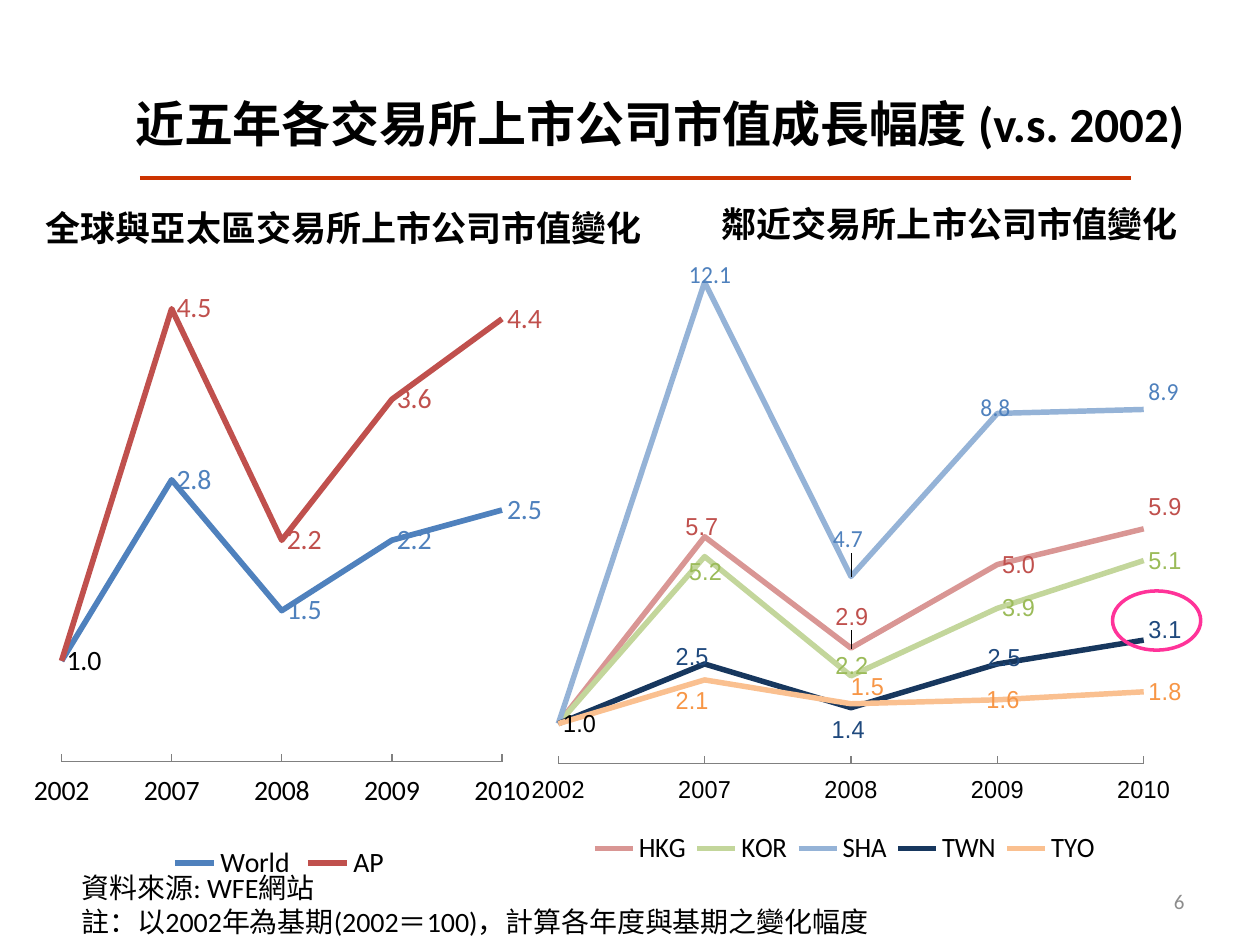
import dataclasses

import lxml.etree
import pptx
import pptx.chart.data
import pptx.dml.color
import pptx.enum.chart
import pptx.enum.shapes
import pptx.enum.text
import pptx.oxml
import pptx.oxml.ns
import pptx.util

Inches = pptx.util.Inches
Pt = pptx.util.Pt
qn = pptx.oxml.ns.qn
rgb = pptx.dml.color.RGBColor.from_string
ALIGN = pptx.enum.text.PP_ALIGN


@dataclasses.dataclass(frozen=True)
class Theme:
    font: str = "Calibri"
    plain_font: str = "Arial"
    text: str = "000000"
    muted: str = "8C8C8C"
    axis: str = "808080"
    rule: str = "CC3300"
    highlight: str = "FF3399"
    blue: str = "4F81BD"
    red: str = "C0504D"
    green: str = "9BBB59"
    navy: str = "1F497D"
    orange: str = "F79646"
    title_size: int = 28
    heading_size: int = 20
    body_size: int = 16
    label_size: int = 14
    number_size: int = 12
    series_width: float = 3.25


theme = Theme()


def write(shape, lines, size, align=ALIGN.LEFT, bold=False, color=theme.text):
    frame = shape.text_frame
    frame.word_wrap = True
    frame.text = "\n".join(lines)
    for paragraph in frame.paragraphs:
        paragraph.alignment = align
        formats = {"name": theme.font, "size": Pt(size), "bold": bold}
        for run in paragraph.runs:
            for name, value in formats.items():
                setattr(run.font, name, value)
            run.font.color.rgb = rgb(color)


def place(parent, index, **values):
    """Give a chart part a manual layout, in fractions of the chart."""
    for old in parent.findall(qn("c:layout")):
        parent.remove(old)
    layout = lxml.etree.Element(qn("c:layout"))
    manual = lxml.etree.SubElement(layout, qn("c:manualLayout"))
    for name, value in values.items():
        lxml.etree.SubElement(manual, qn("c:" + name)).set("val", str(value))
    parent.insert(index, layout)


presentation = pptx.Presentation()
presentation.slide_width, presentation.slide_height = Inches(10), Inches(7.5)
slide = presentation.slides.add_slide(presentation.slide_layouts[5])
shapes = slide.shapes

# Title and rule
title = shapes.title
box = {"left": 0.47, "top": 0.31, "width": 9.53, "height": 1.33}
for name, value in box.items():
    setattr(title, name, Inches(value))
title.text_frame.vertical_anchor = pptx.enum.text.MSO_ANCHOR.MIDDLE
write(title, ["近五年各交易所上市公司市值成長幅度 (v.s. 2002)"],
      theme.title_size, ALIGN.CENTER, True)

rule = shapes.add_connector(pptx.enum.shapes.MSO_CONNECTOR.STRAIGHT,
                            Inches(1.11), Inches(1.41), Inches(8.98), Inches(1.41))
rule.line.color.rgb = rgb(theme.rule)
rule.line.width = Pt(2.25)
lxml.etree.SubElement(rule._element.spPr, qn("a:effectLst"))

# Charts; each series: name, values, line colour, label colour, label font,
# and label shifts in inches by point
years = ["2002", "2007", "2008", "2009", "2010"]
charts = [
    {"at": (0.16, 1.56, 4.14, 5.47), "size": theme.body_size, "font": theme.font,
     "plot": (0.08, 0.09, 0.85, 0.73), "maximum": 5, "legend": None,
     "series": [
         ("World", (1, 2.8, 1.5, 2.2, 2.5), theme.blue, theme.blue, theme.font, {}),
         ("AP", (1, 4.5, 2.2, 3.6, 4.4), theme.red, theme.red, theme.font, {}),
     ]},
    {"at": (4.22, 1.64, 5.16, 5.39), "size": theme.label_size, "font": theme.plain_font,
     "plot": (0.03, 0, 0.94, 0.82), "maximum": 14, "legend": (0.07, 0.92, 0.84, 0.05),
     "series": [
         ("HKG", (1, 5.7, 2.9, 5.0, 5.9), "D99694", theme.red, theme.plain_font,
          {1: (-0.2, -0.08), 2: (-0.17, -0.25), 4: (0, -0.17)}),
         ("KOR", (1, 5.2, 2.2, 3.9, 5.1), "C3D69B", theme.green, theme.plain_font,
          {1: (-0.17, 0.12), 2: (-0.17, -0.08)}),
         ("SHA", (1, 12.1, 4.7, 8.8, 8.9), "95B3D7", theme.blue, theme.font,
          {1: (-0.17, -0.06), 2: (-0.19, -0.3), 3: (-0.18, -0.04), 4: (0, -0.14)}),
         ("TWN", (1, 2.5, 1.4, 2.5, 3.1), "17375E", theme.navy, theme.plain_font,
          {1: (-0.28, -0.06), 2: (-0.2, 0.18), 3: (-0.12, -0.05), 4: (0, -0.08)}),
         ("TYO", (1, 2.1, 1.5, 1.6, 1.8), "FAC090", theme.orange, theme.plain_font,
          {1: (-0.28, 0.17), 2: (-0.04, -0.13), 3: (-0.13, 0)}),
     ]},
]
RIGHT = pptx.enum.chart.XL_LABEL_POSITION.RIGHT

for settings in charts:
    data = pptx.chart.data.CategoryChartData(number_format="0.0")
    data.categories = years
    for name, values, *_ in settings["series"]:
        data.add_series(name, values)
    chart = shapes.add_chart(pptx.enum.chart.XL_CHART_TYPE.LINE,
                             *map(Inches, settings["at"]), data).chart
    chart.has_title = False
    chart.font.name = settings["font"]
    chart.font.size = Pt(settings["size"])
    chart.font.color.rgb = rgb(theme.text)

    chart.has_legend = True
    chart.legend.position = pptx.enum.chart.XL_LEGEND_POSITION.BOTTOM
    chart.legend.include_in_layout = False
    chart.legend.font.name = theme.font
    chart.legend.font.size = Pt(theme.body_size)
    if settings["legend"]:
        place(chart.legend._element, 1, xMode="edge", yMode="edge",
              **dict(zip("xywh", settings["legend"])))
    plot_area = chart._chartSpace.chart.plotArea
    place(plot_area, 0, layoutTarget="inner", xMode="edge", yMode="edge",
          **dict(zip("xywh", settings["plot"])))

    category_axis, value_axis = chart.category_axis, chart.value_axis
    category_axis.major_tick_mark = pptx.enum.chart.XL_TICK_MARK.INSIDE
    category_axis.tick_label_position = pptx.enum.chart.XL_TICK_LABEL_POSITION.LOW
    category_axis.format.line.color.rgb = rgb(theme.axis)
    axis_formats = {"visible": False, "has_major_gridlines": False,
                    "minimum_scale": 0, "maximum_scale": settings["maximum"]}
    for name, value in axis_formats.items():
        setattr(value_axis, name, value)
    cross_between = lxml.etree.Element(qn("c:crossBetween"), val="midCat")
    value_axis._element.find(qn("c:crosses")).addnext(cross_between)

    plot = chart.plots[0]
    plot.vary_by_categories = False
    _, _, chart_width, chart_height = settings["at"]
    last = len(settings["series"]) - 1
    for index, (series, row) in enumerate(zip(plot.series, settings["series"])):
        _, _, line_color, label_color, label_font, shifts = row
        series.smooth = False
        series.format.line.color.rgb = rgb(line_color)
        series.format.line.width = Pt(theme.series_width)

        labels = series.data_labels
        labels.show_value = True
        labels.position = RIGHT
        labels.number_format = "0.0"
        labels.number_format_is_linked = False
        colors = {point: label_color for point in shifts}
        colors[0] = theme.text
        fonts = [labels.font]
        for point, color in colors.items():
            label = series.points[point].data_label
            label.position = RIGHT
            label.font.color.rgb = rgb(color)
            fonts.append(label.font)
            element = label._dLbl
            if point in shifts:
                x, y = shifts[point]
                place(element, 1, x=x / chart_width, y=y / chart_height)
            elif index < last:  # the shared starting value is labelled once
                for child in list(element)[1:]:
                    element.remove(child)
                lxml.etree.SubElement(element, qn("c:delete")).set("val", "1")
                fonts.pop()
        labels.font.color.rgb = rgb(label_color)
        for font in fonts:
            font.name = label_font
            font.size = Pt(settings["size"])

# Headings, source note and page number
texts = [
    ((0.55, 6.86, 7.27, 0.64),
     ["資料來源: WFE網站", "註：以2002年為基期(2002＝100)，計算各年度與基期之變化幅度"],
     theme.body_size, ALIGN.LEFT, False),
    ((0.23, 1.59, 5, 0.44), ["全球與亞太區交易所上市公司市值變化"],
     theme.heading_size, ALIGN.CENTER, True),
    ((5.63, 1.56, 3.83, 0.44), ["鄰近交易所上市公司市值變化"],
     theme.heading_size, ALIGN.LEFT, True),
]
for position, *content in texts:
    write(shapes.add_textbox(*map(Inches, position)), *content)

number = shapes.add_textbox(Inches(7.17), Inches(6.95), Inches(2.33), Inches(0.4))
number.text_frame.vertical_anchor = pptx.enum.text.MSO_ANCHOR.MIDDLE
write(number, ["6"], theme.number_size, ALIGN.RIGHT, color=theme.muted)

# Ring around the latest Taiwan value
ring = shapes.add_shape(pptx.enum.shapes.MSO_SHAPE.OVAL,
                        Inches(8.83), Inches(4.69), Inches(0.7), Inches(0.47))
ring.shadow.inherit = False
ring.fill.background()
ring.line.color.rgb = rgb(theme.highlight)
ring.line.width = Pt(2)

presentation.save("out.pptx")
